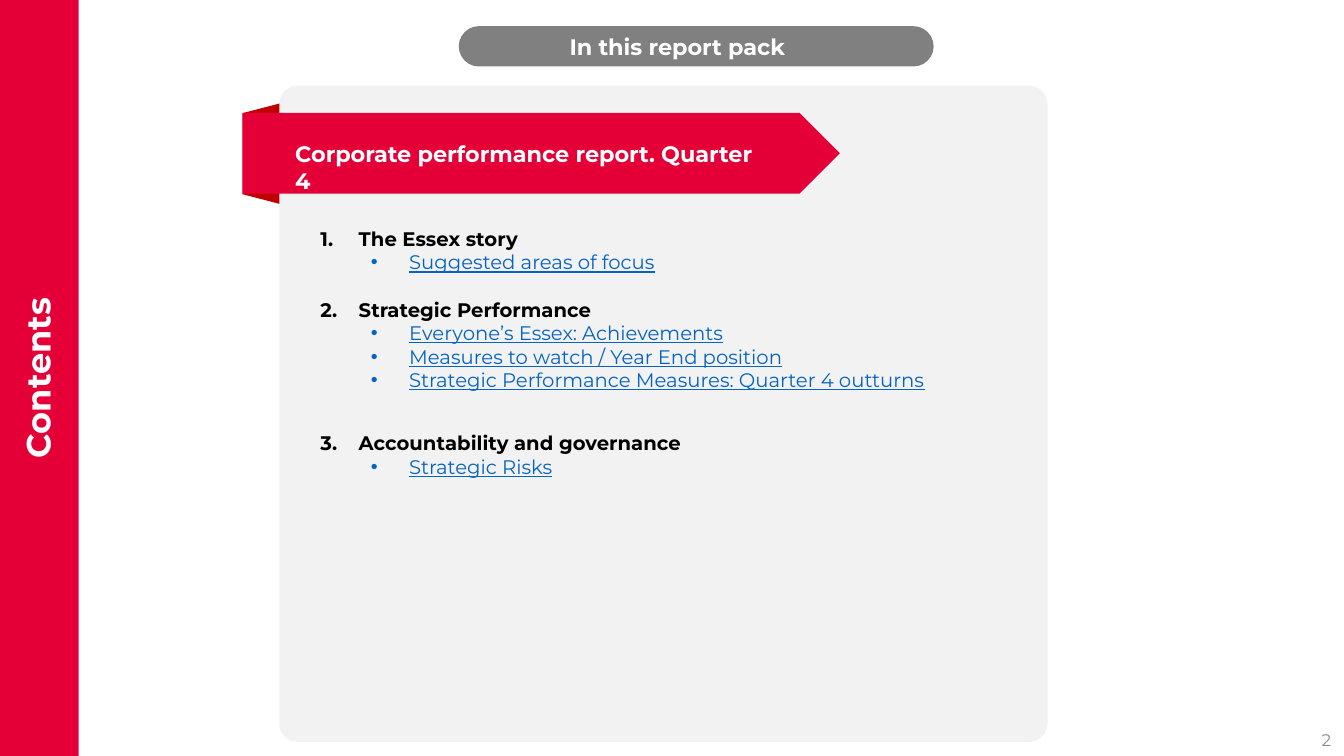
import dataclasses

import lxml.etree
import pptx
import pptx.dml.color
import pptx.enum.shapes
import pptx.enum.text
import pptx.oxml.ns
import pptx.util

Inches = pptx.util.Inches
SHAPE = pptx.enum.shapes.MSO_SHAPE
ALIGN = pptx.enum.text.PP_ALIGN
ANCHOR = pptx.enum.text.MSO_ANCHOR


@dataclasses.dataclass(frozen=True)
class Theme:
    font: str = "Montserrat"
    bullet_font: str = "Arial"
    red: str = "E40037"
    dark_red: str = "C00000"
    panel: str = "F2F2F2"
    grey: str = "808080"
    number_grey: str = "8C8C8C"
    white: str = "FFFFFF"
    black: str = "000000"
    link: str = "0563C1"
    sidebar_size: int = 24
    heading_size: int = 16
    body_size: int = 14
    number_size: int = 12


THEME = Theme()

SECTIONS = [
    ("The Essex story", 0, ["Suggested areas of focus"]),
    ("Strategic Performance", 17, [
        "Everyone’s Essex: Achievements",
        "Measures to watch / Year End position",
        "Strategic Performance Measures: Quarter 4 outturns",
    ]),
    ("Accountability and governance", 28, ["Strategic Risks"]),
]


def rgb(color):
    return pptx.dml.color.RGBColor.from_string(color)


def write(p, text, size=THEME.body_size, color=THEME.black, bold=False,
          underline=False, align=ALIGN.LEFT):
    p.alignment = align
    r = p.add_run()
    r.text = text
    r.font.name = THEME.font
    r.font.size = pptx.util.Pt(size)
    r.font.bold = bold
    r.font.underline = underline
    r.font.color.rgb = rgb(color)


def set_bullet(p, indent, tag, **attributes):
    pPr = p._p.get_or_add_pPr()
    pPr.set("marL", str(Inches(indent)))
    pPr.set("indent", str(-Inches(0.38)))
    qn = pptx.oxml.ns.qn
    if tag == "a:buChar":
        lxml.etree.SubElement(pPr, qn("a:buFont"), typeface=THEME.bullet_font)
    lxml.etree.SubElement(pPr, qn(tag), **attributes)


class SlideBuilder:
    def __init__(self, s, theme):
        self.s = s
        self.theme = theme

    def shape(self, kind, left, top, width, height, fill, rotation=0, radius=None):
        sp = self.s.shapes.add_shape(
            kind, Inches(left), Inches(top), Inches(width), Inches(height))
        sp.shadow.inherit = False
        sp.fill.solid()
        sp.fill.fore_color.rgb = rgb(fill)
        sp.line.fill.background()
        sp.rotation = rotation
        if radius is not None:
            sp.adjustments[0] = radius
        return sp

    def text_frame(self, left, top, width, height, anchor=ANCHOR.TOP):
        tf = self.s.shapes.add_textbox(
            Inches(left), Inches(top), Inches(width), Inches(height)).text_frame
        tf.word_wrap = True
        tf.vertical_anchor = anchor
        return tf

    def heading(self, text, left, top, width):
        tf = self.text_frame(left, top, width, 0.37)
        write(tf.paragraphs[0], text, size=self.theme.heading_size,
              color=self.theme.white, bold=True)

    def sidebar(self, text):
        sp = self.shape(SHAPE.RECTANGLE, -3.38, 3.34, 7.5, 0.82,
                        self.theme.red, rotation=270)
        tf = sp.text_frame
        tf.margin_left = tf.margin_right = tf.margin_top = tf.margin_bottom = 0
        tf.vertical_anchor = ANCHOR.MIDDLE
        write(tf.paragraphs[0], text, size=self.theme.sidebar_size,
              color=self.theme.white, bold=True, align=ALIGN.CENTER)

    def slide_number(self, text):
        tf = self.text_frame(10.22, 7.17, 3.08, 0.33, ANCHOR.MIDDLE)
        write(tf.paragraphs[0], text, size=self.theme.number_size,
              color=self.theme.number_grey, align=ALIGN.RIGHT)

    def contents(self, sections, left, top, width, height):
        tf = self.text_frame(left, top, width, height)
        for number, (title, gap, links) in enumerate(sections, 1):
            p = tf.paragraphs[0] if number == 1 else tf.add_paragraph()
            p.space_before = pptx.util.Pt(gap)
            set_bullet(p, 0.38, "a:buAutoNum", type="arabicPeriod", startAt=str(number))
            write(p, title, bold=True)
            for link in links:
                p = tf.add_paragraph()
                p.level = 1
                set_bullet(p, 0.88, "a:buChar", char="•")
                write(p, link, color=self.theme.link, underline=True)


def main():
    prs = pptx.Presentation()
    prs.slide_width = Inches(13.33)
    prs.slide_height = Inches(7.5)
    s = prs.slides.add_slide(prs.slide_layouts[6])
    page = SlideBuilder(s, THEME)

    page.shape(SHAPE.FLOWCHART_MANUAL_OPERATION, 2.25, 1.01, 1.34, 1.03,
               THEME.dark_red, rotation=90)
    page.slide_number("2")
    page.shape(SHAPE.ROUNDED_RECTANGLE, 2.77, 0.85, 7.62, 6.51, THEME.panel, radius=0.028)
    page.sidebar("Contents")
    page.shape(SHAPE.PENTAGON, 2.41, 1.12, 5.92, 0.8, THEME.red)
    page.heading("Corporate performance report. Quarter 4", 2.83, 1.34, 4.9)
    page.contents(SECTIONS, 3.08, 2.2, 6.74, 3.08)
    page.shape(SHAPE.ROUNDED_RECTANGLE, 4.55, 0.26, 4.71, 0.4, THEME.grey, radius=0.5)
    page.heading("In this report pack", 5.55, 0.28, 3.49)

    prs.save("out.pptx")


if __name__ == "__main__":
    main()
